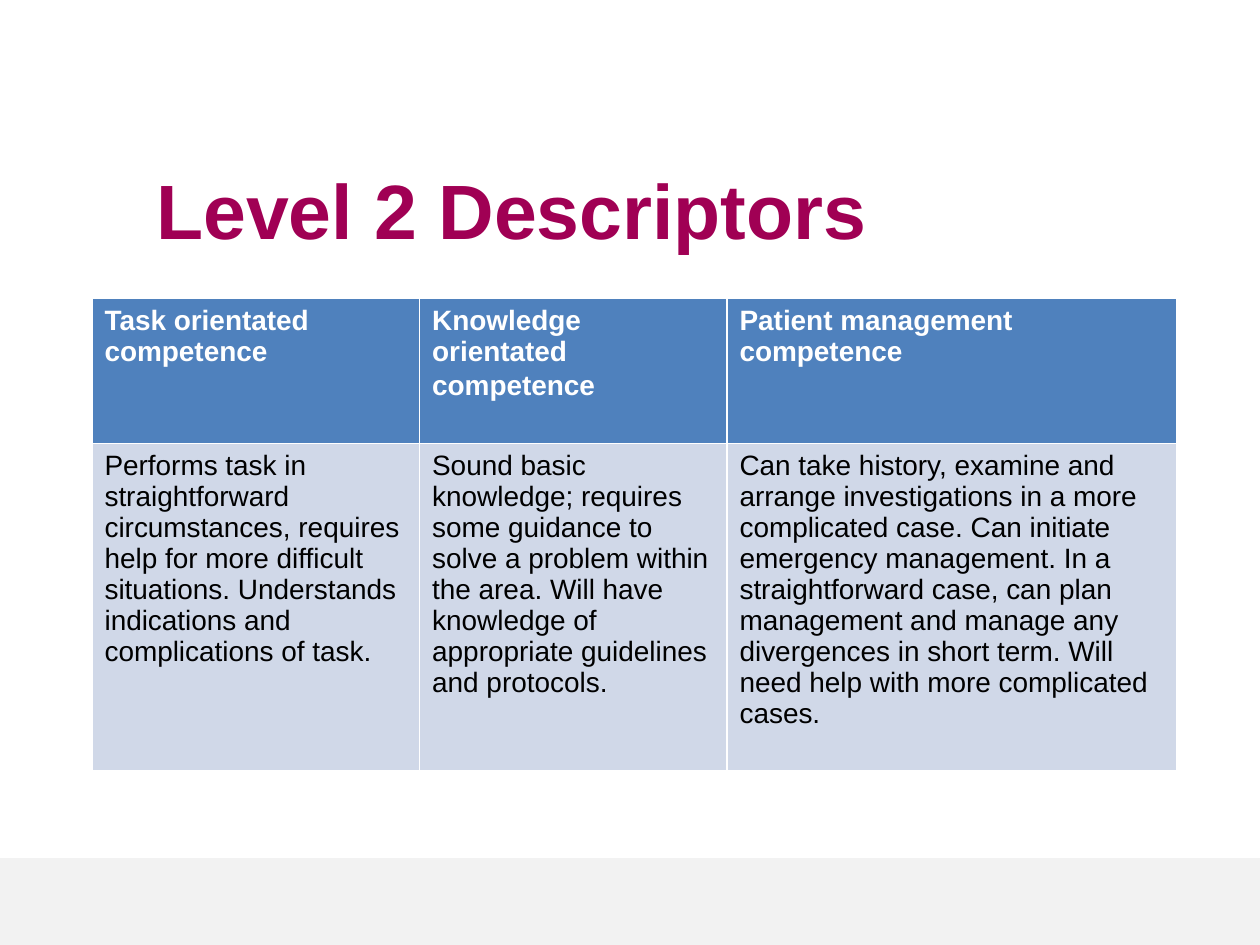
"""Build the Level 2 Descriptors slide with its competence table."""
from lxml import etree
from pptx import Presentation
from pptx.dml.color import RGBColor
from pptx.enum.shapes import MSO_SHAPE
from pptx.enum.text import MSO_ANCHOR, PP_ALIGN
from pptx.oxml.ns import qn
from pptx.util import Inches, Pt

RECTANGLE = MSO_SHAPE.RECTANGLE
LEFT = PP_ALIGN.LEFT
TOP, MIDDLE = MSO_ANCHOR.TOP, MSO_ANCHOR.MIDDLE
WHITE = RGBColor(0xFF, 0xFF, 0xFF)
BLACK = RGBColor(0x00, 0x00, 0x00)
MAGENTA = RGBColor(0xA0, 0x00, 0x54)
BLUE = RGBColor(0x4F, 0x81, 0xBD)
PALE_BLUE = RGBColor(0xD0, 0xD8, 0xE8)
PALE_GREY = RGBColor(0xF2, 0xF2, 0xF2)

COLUMN_WIDTHS = [2.6, 2.44, 3.57]
ROW_HEIGHTS = [1.15, 2.6]
ROW_STYLES = [(BLUE, WHITE, True), (PALE_BLUE, BLACK, False)]
DESCRIPTORS = [
    ["Task orientated competence",
     "Knowledge orientated competence",
     "Patient management competence"],
    ["Performs task in straightforward circumstances, requires help for more "
     "difficult situations. Understands indications and complications of task.",
     "Sound basic knowledge; requires some guidance to solve a problem within "
     "the area. Will have knowledge of appropriate guidelines and protocols.",
     "Can take history, examine and arrange investigations in a more "
     "complicated case. Can initiate emergency management. In a "
     "straightforward case, can plan management and manage any divergences in "
     "short term. Will need help with more complicated cases."],
]


def add_text(paragraph, text, *, size=16, color=BLACK, bold=False):
    paragraph.alignment = LEFT
    span = paragraph.add_run()
    span.text = text
    span.font.name = "Arial"
    span.font.size = Pt(size)
    span.font.bold = bold
    span.font.color.rgb = color


def add_borders(cell, color, width):
    properties = cell._tc.get_or_add_tcPr()
    for side in ("a:lnL", "a:lnR", "a:lnT", "a:lnB"):
        line = etree.SubElement(properties, qn(side), w=str(Pt(width)))
        fill = etree.SubElement(line, qn("a:solidFill"))
        etree.SubElement(fill, qn("a:srgbClr"), val=str(color))


deck = Presentation()
deck.slide_width, deck.slide_height = Inches(10), Inches(7.5)
page = deck.slides.add_slide(deck.slide_layouts[5])

band_height = Inches(0.69)
band = page.shapes.add_shape(
    RECTANGLE, 0, deck.slide_height - band_height, deck.slide_width, band_height)
band.shadow.inherit = False
band.fill.solid()
band.fill.fore_color.rgb = PALE_GREY
band.line.fill.background()

title = page.shapes.title
title.left, title.top = Inches(1.14), Inches(1.13)
title.width, title.height = Inches(7.68), Inches(1.05)
title.text_frame.vertical_anchor = MIDDLE
add_text(title.text_frame.paragraphs[0], "Level 2 Descriptors",
         size=44, color=MAGENTA, bold=True)

table = page.shapes.add_table(
    len(ROW_HEIGHTS), len(COLUMN_WIDTHS), Inches(0.73), Inches(2.37),
    Inches(sum(COLUMN_WIDTHS)), Inches(sum(ROW_HEIGHTS))).table
for column, width in zip(table.columns, COLUMN_WIDTHS):
    column.width = Inches(width)
for row, height, texts, style in zip(table.rows, ROW_HEIGHTS, DESCRIPTORS, ROW_STYLES):
    row.height = Inches(height)
    fill_color, text_color, bold = style
    for cell, text in zip(row.cells, texts):
        add_borders(cell, WHITE, 1)
        cell.fill.solid()
        cell.fill.fore_color.rgb = fill_color
        cell.vertical_anchor = TOP
        add_text(cell.text_frame.paragraphs[0], text, color=text_color, bold=bold)

add_text(table.cell(0, 1).text_frame.paragraphs[0], " ",
         size=18, color=WHITE, bold=True)

deck.save("out.pptx")
